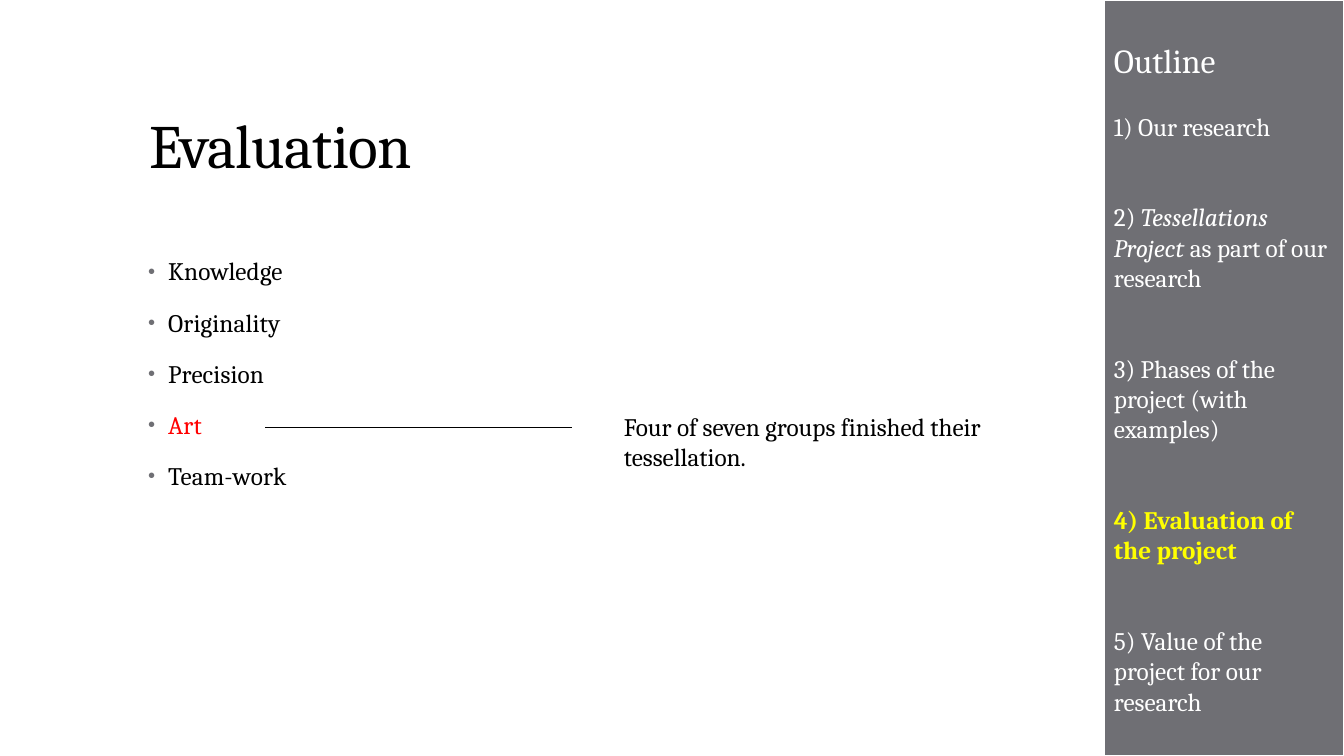
from lxml import etree
from pptx import Presentation
from pptx.dml.color import RGBColor
from pptx.enum.shapes import MSO_CONNECTOR, MSO_SHAPE
from pptx.enum.text import MSO_ANCHOR, PP_ALIGN
from pptx.oxml.ns import qn
from pptx.util import Inches, Pt

RECT = MSO_SHAPE.RECTANGLE
STRAIGHT = MSO_CONNECTOR.STRAIGHT
TOP, MIDDLE, BOTTOM = MSO_ANCHOR.TOP, MSO_ANCHOR.MIDDLE, MSO_ANCHOR.BOTTOM
LEFT = PP_ALIGN.LEFT

FONT = "Cambria"
BLACK, WHITE, GREY, RED, YELLOW = "000000", "FFFFFF", "6F6F74", "FF0000", "FFFF00"

CRITERIA = ["Knowledge", "Originality", "Precision", "Art", "Team-work"]
CURRENT_CRITERION = "Art"
# Each outline entry is a list of (text, italic) runs.
OUTLINE = [
    [("1) Our research", False)],
    [("2) ", False), ("Tessellations Project ", True),
     ("as part of our research", False)],
    [("3) Phases of the project (with examples)", False)],
    [("4) Evaluation of the project", False)],
    [("5) Value of the project for our research", False)],
]
CURRENT_SECTION = 3


def rgb(color):
    return RGBColor.from_string(color)


def add_run(p, text, size, color, bold=False, italic=False, tracking=None):
    """Append a run; tracking is in hundredths of a point."""
    r = p.add_run()
    r.text = text
    r.font.name = FONT
    r.font.size = Pt(size)
    r.font.color.rgb = rgb(color)
    r.font.bold = bold
    r.font.italic = italic
    if tracking is not None:
        r.font._element.set("spc", str(tracking))


def next_paragraph(tf, first):
    p = tf.paragraphs[0] if first else tf.add_paragraph()
    p.alignment = LEFT
    return p


def add_text_frame(s, box, anchor=TOP):
    tf = s.shapes.add_textbox(*map(Inches, box)).text_frame
    tf.word_wrap = True
    tf.vertical_anchor = anchor
    return tf


def add_bullet(p):
    """Give the paragraph a hanging grey bullet."""
    pPr = p._p.get_or_add_pPr()
    pPr.set("marL", str(Inches(0.2)))
    pPr.set("indent", str(-Inches(0.2)))
    color = etree.SubElement(pPr, qn("a:buClr"))
    etree.SubElement(color, qn("a:srgbClr"), val=GREY)
    etree.SubElement(pPr, qn("a:buSzPct"), val="80000")
    etree.SubElement(pPr, qn("a:buFont"), typeface="Arial")
    etree.SubElement(pPr, qn("a:buChar"), char="•")


def add_title(s, box):
    p = next_paragraph(add_text_frame(s, box, BOTTOM), True)
    p.line_spacing = 0.9
    add_run(p, "Evaluation", 44, BLACK, tracking=-50)


def add_criteria(s, box):
    tf = add_text_frame(s, box)
    for i, criterion in enumerate(CRITERIA):
        p = next_paragraph(tf, i == 0)
        p.line_spacing = 0.95
        p.space_after = Pt(16)
        add_bullet(p)
        color = RED if criterion == CURRENT_CRITERION else BLACK
        add_run(p, criterion, 18, color, tracking=10)


def add_remark(s, box):
    """Comment on the current criterion, with a line leading to it."""
    left, top = box[:2]
    p = next_paragraph(add_text_frame(s, box), True)
    add_run(p, "Four of seven groups finished their tessellation.", 18, BLACK)
    y = Inches(top + 0.21)
    line = s.shapes.add_connector(
        STRAIGHT, Inches(left - 3.46), y, Inches(left - 0.42), y)
    line.line.color.rgb = rgb(BLACK)
    line.line.width = Pt(0.75)
    etree.SubElement(line._element.spPr, qn("a:effectLst"))


def add_outline(s, box):
    sp = s.shapes.add_shape(RECT, *map(Inches, box))
    sp.shadow.inherit = False
    sp.fill.solid()
    sp.fill.fore_color.rgb = rgb(GREY)
    sp.line.color.rgb = rgb(WHITE)
    sp.line.width = Pt(1.1)
    tf = sp.text_frame
    tf.word_wrap = True
    tf.vertical_anchor = MIDDLE
    p = next_paragraph(tf, True)
    p.space_after = Pt(22)
    add_run(p, "Outline", 24, WHITE)
    for i, runs in enumerate(OUTLINE):
        p = next_paragraph(tf, False)
        if i < len(OUTLINE) - 1:
            p.space_after = Pt(43.3)
        current = i == CURRENT_SECTION
        for text, italic in runs:
            add_run(p, text, 18, YELLOW if current else WHITE, current, italic)


def main():
    prs = Presentation()
    prs.slide_width, prs.slide_height = Inches(13.33), Inches(7.5)
    s = prs.slides.add_slide(prs.slide_layouts[6])
    add_title(s, (1.38, 0.4, 10.6, 1.45))
    add_criteria(s, (1.37, 2.51, 9.4, 4.25))
    add_remark(s, (6.09, 4.03, 4.36, 0.71))
    add_outline(s, (10.95, 0, 2.38, 7.5))
    prs.save("out.pptx")


if __name__ == "__main__":
    main()
